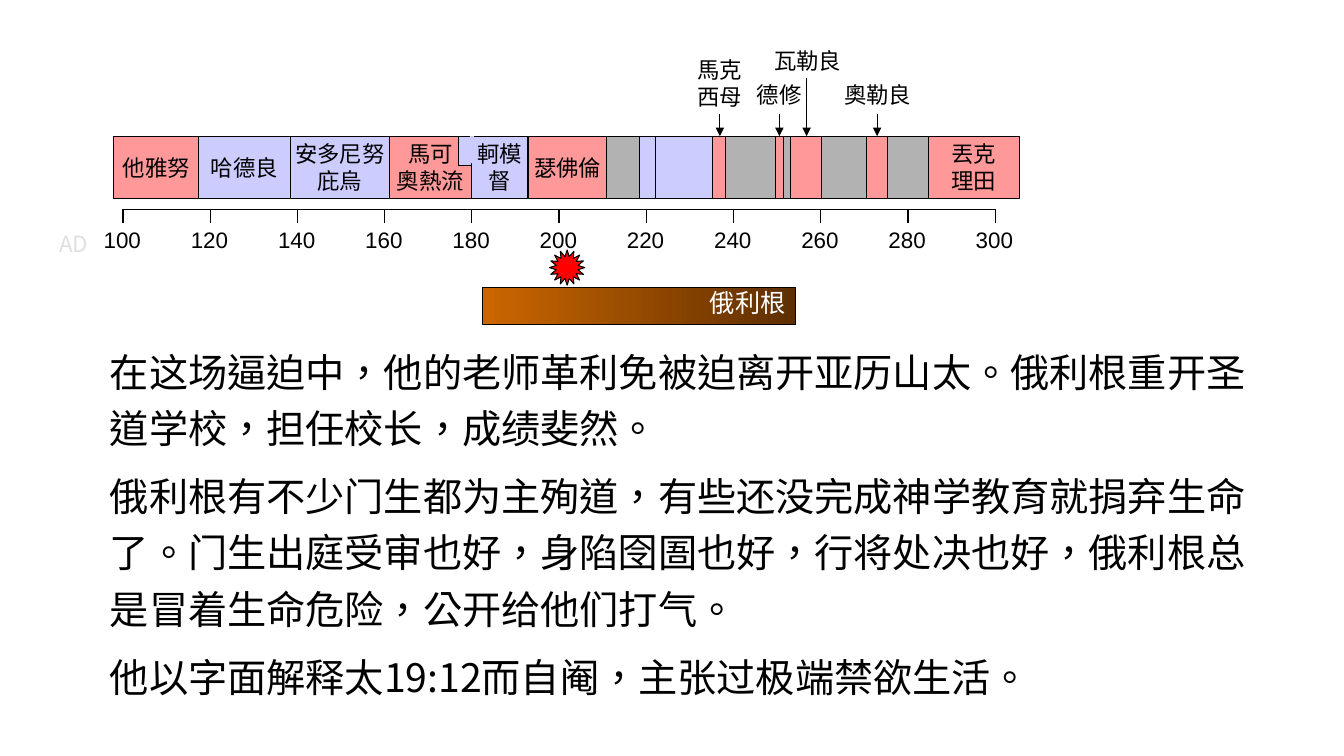
"""Build a slide with a timeline of emperors from AD 100 to 300 and notes on 俄利根."""
from dataclasses import dataclass
from itertools import pairwise

from lxml.etree import SubElement
from pptx import Presentation
from pptx.dml.color import RGBColor
from pptx.enum.shapes import MSO_CONNECTOR as CONN, MSO_SHAPE as SHAPE
from pptx.enum.text import MSO_ANCHOR as ANCHOR, MSO_AUTO_SIZE as AUTO, PP_ALIGN as ALIGN
from pptx.oxml import parse_xml
from pptx.oxml.ns import nsdecls, qn
from pptx.util import Inches, Pt


@dataclass(frozen=True)
class Theme:
    black: str = "000000"
    white: str = "FFFFFF"
    faint: str = "E0E0E0"
    pink: str = "FF9999"
    lilac: str = "CCCCFF"
    gray: str = "B2B2B2"
    red: str = "FF0000"
    orange: str = "CC6600"
    brown: str = "5E2F00"
    label: str = "Calibri"
    scale: str = "Arial"
    body: str = "Noto Sans CJK SC"
    small: int = 16
    medium: int = 18
    large: int = 28


T = Theme()


def write(tf, lines, font=T.label, size=T.small, color=T.black, align=ALIGN.CENTER,
          anchor=ANCHOR.TOP, inset=0, spacing=1.0, after=0):
    tf.word_wrap = True
    tf.auto_size = AUTO.NONE
    tf.vertical_anchor = anchor
    tf.margin_left = tf.margin_right = Inches(inset)
    for i, line in enumerate(lines):
        p = tf.paragraphs[0] if i == 0 else tf.add_paragraph()
        p.alignment, p.line_spacing = align, spacing
        p.space_before, p.space_after = Pt(0), Pt(after)
        r = p.add_run()
        r.text = line
        r.font.name, r.font.size = font, Pt(size)
        r.font.color.rgb = RGBColor.from_string(color)
        r.font._element.set("lang", "zh-TW")
        SubElement(r.font._element, qn("a:ea"), typeface=font)


def add_block(kind, x, y, w, h, fill, outlined=True):
    s = sp.add_shape(kind, Inches(x), Inches(y), Inches(w), Inches(h))
    s.shadow.inherit = False
    s.fill.solid()
    s.fill.fore_color.rgb = RGBColor.from_string(fill)
    if outlined:
        s.line.color.rgb = RGBColor.from_string(T.black)
        s.line.width = Pt(0.75)
    else:
        s.line.fill.background()
    return s


prs = Presentation()
prs.slide_width, prs.slide_height = Inches(13.33), Inches(7.5)
slide = prs.slides.add_slide(prs.slide_layouts[1])
sp = slide.shapes
title = sp.title._element
title.getparent().remove(title)

STEP = 0.865
ticks = ([""] * 10, 1.22, 2.08, 0.4, T.black)
years = ([str(year) for year in range(100, 301, 20)], 0.78, 2.22, 0.37, T.white)
for labels, x, y, h, border in (ticks, years):
    table = sp.add_table(1, len(labels), Inches(x), Inches(y),
                         Inches(STEP * len(labels)), Inches(h)).table
    table.first_row = table.horz_banding = False
    for column in table.columns:
        column.width = Inches(STEP)
    for cell, label in zip(table.rows[0].cells, labels):
        cell.fill.solid()
        cell.fill.fore_color.rgb = RGBColor.from_string(T.white)
        if label:
            cell.margin_left = cell.margin_right = 0
            write(cell.text_frame, [label], font=T.scale)
        for i, side in enumerate("LRTB"):
            cell._tc.get_or_add_tcPr().insert(i, parse_xml(
                f'<a:ln{side} {nsdecls("a")} w="12700"><a:solidFill>'
                f'<a:srgbClr val="{border}"/></a:solidFill></a:ln{side}>'))

BAND_TOP, BAND_HEIGHT = 1.35, 0.62
edges = [1.13, 1.97, 2.88, 3.86, 4.68, 5.23, 5.24, 6.02, 6.34, 6.5, 7.07,
         7.2, 7.69, 7.77, 7.84, 8.15, 8.59, 8.8, 9.21, 10.11]
colors = [T.pink, T.lilac, T.lilac, T.pink, T.lilac, T.gray, T.pink, T.gray, T.lilac,
          T.lilac, T.pink, T.gray, T.pink, T.gray, T.pink, T.gray, T.pink, T.gray, T.pink]
emperors = {0: ["他雅努"], 1: ["哈德良"], 2: ["安多尼努", "庇烏"], 3: ["馬可", "奧熱流"],
            4: ["軻模", "督"], 6: ["瑟佛倫"], 18: ["丟克", "理田"]}
for i, ((left, right), color) in enumerate(zip(pairwise(edges), colors)):
    reign = add_block(SHAPE.RECTANGLE, left, BAND_TOP, right - left, BAND_HEIGHT, color)
    if i in emperors:
        write(reign.text_frame, emperors[i], anchor=ANCHOR.MIDDLE)

add_block(SHAPE.RECTANGLE, 4.55, BAND_TOP, 0.13, 0.29, T.lilac)
add_block(SHAPE.RECTANGLE, 4.66, BAND_TOP, 0.04, 0.27, T.lilac, outlined=False)

callouts = [(["馬克", "西母"], 6.79, 0.51, 0.69, 0.64), (["德修"], 7.38, 0.76, 0.7, 0.37),
            (["奧勒良"], 8.27, 0.76, 0.87, 0.37), (["瓦勒良"], 7.52, 0.42, 0.98, 0.37)]
for lines, x, y, w, h in callouts:
    s = sp.add_textbox(Inches(x), Inches(y), Inches(w), Inches(h))
    write(s.text_frame, lines)

for x, top in ((7.14, 1.13), (7.73, 1.13), (8, 0.77), (8.7, 1.13)):
    arrow = sp.add_connector(CONN.STRAIGHT, Inches(x), Inches(top), Inches(x), Inches(BAND_TOP))
    arrow.line.color.rgb = RGBColor.from_string(T.black)
    arrow.line.width = Pt(0.75)
    SubElement(arrow.line._get_or_add_ln(), qn("a:tailEnd"), type="triangle")
    SubElement(arrow._element.spPr, qn("a:effectLst"))

era = sp.add_textbox(Inches(0.48), Inches(2.23), Inches(0.5), Inches(0.4))
write(era.text_frame, ["AD"], font=T.body, color=T.faint)

body = slide.placeholders[1]
body.left, body.top, body.width, body.height = map(Inches, (0.99, 3.31, 11.56, 3.78))
write(body.text_frame, [
    "在这场逼迫中，他的老师革利免被迫离开亚历山太。俄利根重开圣道学校，担任校长，成绩斐然。",
    "俄利根有不少门生都为主殉道，有些还没完成神学教育就捐弃生命了。门生出庭受审也好，"
    "身陷囹圄也好，行将处决也好，俄利根总是冒着生命危险，公开给他们打气。",
    "他以字面解释太19:12而自阉，主张过极端禁欲生活。",
], font=T.body, size=T.large, align=ALIGN.LEFT, inset=0.1, spacing=1.2, after=8)
for p in body.text_frame.paragraphs:
    pPr = p._p.get_or_add_pPr()
    pPr.set("marL", "0")
    pPr.set("indent", "0")
    SubElement(pPr, qn("a:buNone"))

life = add_block(SHAPE.RECTANGLE, 4.79, 2.85, 3.1, 0.37, T.orange)
life.fill.gradient()
life.fill.gradient_angle = 0
for stop, color in zip(life.fill.gradient_stops, (T.orange, T.brown)):
    stop.color.rgb = RGBColor.from_string(color)
write(life.text_frame, ["俄利根"], font=T.body, size=T.medium, color=T.white,
      align=ALIGN.RIGHT, inset=0.1, spacing=0.85)

star = add_block(SHAPE.STAR_16_POINT, 5.45, 2.48, 0.35, 0.35, T.red)
star.adjustments[0] = 0.314

prs.save("out.pptx")
